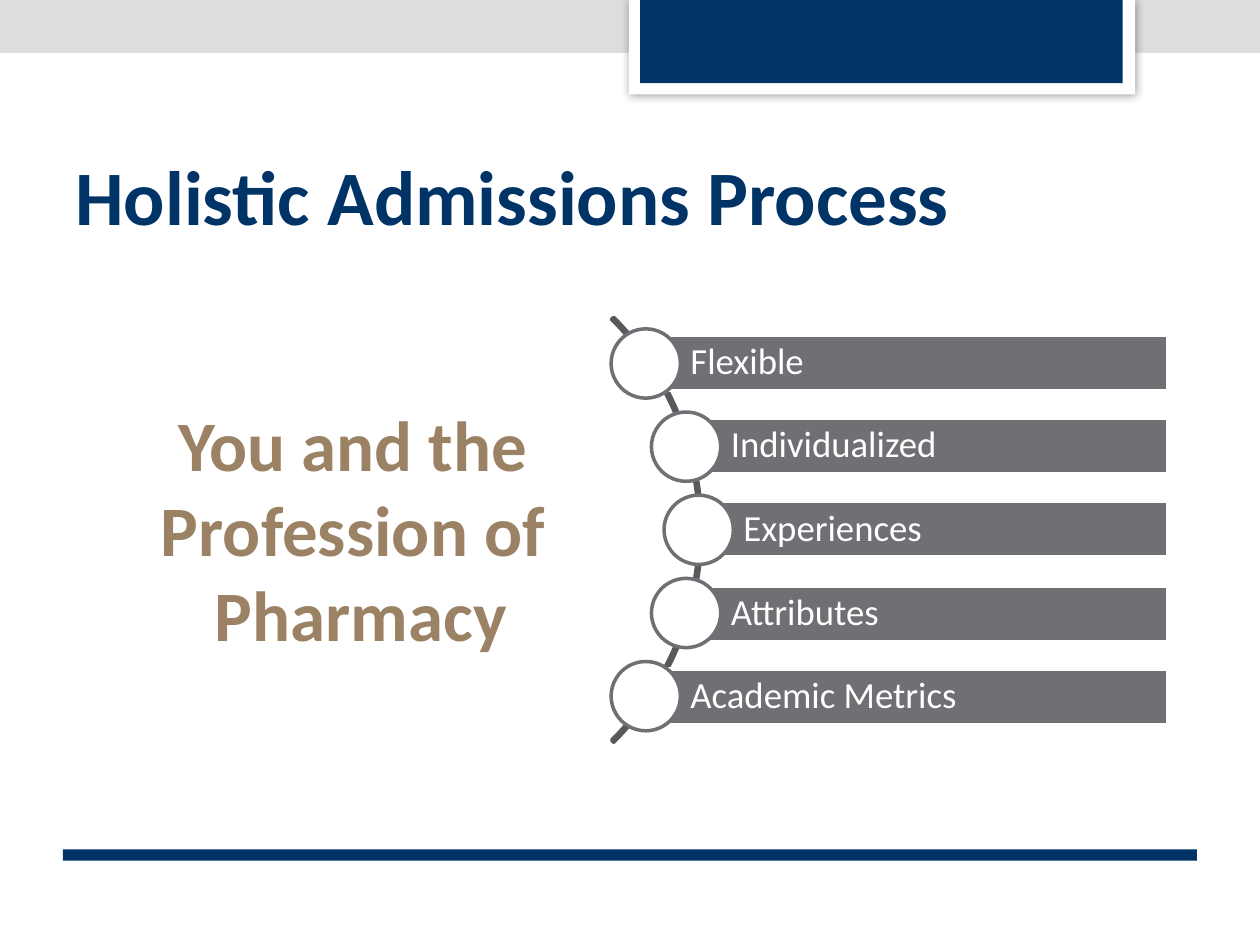
from lxml import etree
from pptx import Presentation
from pptx.dml.color import RGBColor
from pptx.enum.shapes import MSO_SHAPE
from pptx.enum.text import MSO_ANCHOR, MSO_AUTO_SIZE, PP_ALIGN
from pptx.oxml.ns import qn
from pptx.util import Pt

PX = 9144  # 100 px to the inch
RECTANGLE, OVAL, ARC = MSO_SHAPE.RECTANGLE, MSO_SHAPE.OVAL, MSO_SHAPE.BLOCK_ARC
MIDDLE = MSO_ANCHOR.MIDDLE
LEFT, CENTER = PP_ALIGN.LEFT, PP_ALIGN.CENTER
FIT_SHAPE = MSO_AUTO_SIZE.SHAPE_TO_FIT_TEXT

NAVY, GRAY, DARK_GRAY = "003366", "6F6F74", "59595D"
WHITE, TAN, BACKDROP = "FFFFFF", "9C8265", "DDDDDD"

TITLE_FORMAT = {"size": Pt(44), "bold": True}
THEME_FORMAT = {"size": Pt(40.5), "bold": True}
LABEL_FORMAT = {"size": Pt(21), "bold": False}


def set_color(target, color):
    target.rgb = RGBColor.from_string(color)


def add_block(slide, kind, box, fill=None, line=None):
    shape = slide.shapes.add_shape(kind, *(value * PX for value in box))
    shape.shadow.inherit = False
    if fill:
        shape.fill.solid()
        set_color(shape.fill.fore_color, fill)
    else:
        shape.fill.background()
    if line:
        set_color(shape.line.color, line)
        shape.line.width = Pt(2)
    else:
        shape.line.fill.background()
    return shape


def add_glow_shadow(shape):
    """Give the shape a soft black shadow that spreads evenly on all sides."""
    effects = shape._element.spPr.find(qn("a:effectLst"))
    shadow = etree.SubElement(effects, qn("a:outerShdw"), blurRad=str(Pt(5)), dist="0")
    color = etree.SubElement(shadow, qn("a:srgbClr"), val="000000")
    etree.SubElement(color, qn("a:alpha"), val="40000")


def set_text(frame, lines, color, font_format, alignment, spacing=1.0):
    for index, line in enumerate(lines):
        paragraph = frame.paragraphs[0] if index == 0 else frame.add_paragraph()
        paragraph.alignment = alignment
        paragraph.line_spacing = spacing
        run = paragraph.add_run()
        run.text = line
        run.font.name = "Calibri"
        set_color(run.font.color, color)
        for name, value in font_format.items():
            setattr(run.font, name, value)


def set_frame(frame, **settings):
    for name, value in settings.items():
        setattr(frame, name, value)


def add_text_box(slide, box):
    return slide.shapes.add_textbox(*(value * PX for value in box)).text_frame


def draw_backdrop(slide, width, height):
    background = slide.background.fill
    background.solid()
    set_color(background.fore_color, BACKDROP)
    add_block(slide, RECTANGLE, (0, 42, width, height - 42), WHITE)
    add_block(slide, RECTANGLE, (50, 674, width - 100, 9), NAVY)


def draw_header_tab(slide, left, top, width, height):
    frame = add_block(slide, RECTANGLE, (left, top, width, height), WHITE)
    add_glow_shadow(frame)
    add_block(slide, RECTANGLE, (left + 9, top, width - 19, height - 9), NAVY)


def draw_title(slide, box, title):
    frame = add_text_box(slide, box)
    set_frame(frame, word_wrap=True, vertical_anchor=MIDDLE)
    set_text(frame, [title], NAVY, TITLE_FORMAT, LEFT)


def draw_theme(slide, box, lines):
    frame = add_text_box(slide, box)
    set_frame(frame, word_wrap=False, auto_size=FIT_SHAPE,
              margin_left=7 * PX, margin_right=7 * PX,
              margin_top=4 * PX, margin_bottom=4 * PX)
    set_text(frame, lines, TAN, THEME_FORMAT, CENTER)


def draw_curved_list(slide, left, top, width, height, items):
    """Labelled bars, each led by a circle, along an arc that bulges to the right."""
    arc_size, bar_height, circle_size = 477, 44, 55
    pitch = height / len(items)
    arc_top = round(top + (height - arc_size) / 2)
    arc = add_block(slide, ARC, (left - 405, arc_top, arc_size, arc_size),
                    line=DARK_GRAY)
    for index, value in enumerate((189, 27, 0.005)):  # from 315 to 45 degrees
        arc.adjustments[index] = value

    for index, (label, indent) in enumerate(items):
        center_x = left + circle_size // 2 + 1 + indent
        center_y = top + pitch * (index + 0.5)
        bar_top = round(center_y - bar_height / 2)
        bar = add_block(slide, RECTANGLE,
                        (center_x, bar_top, left + width - center_x, bar_height),
                        GRAY, WHITE)
        set_frame(bar.text_frame, word_wrap=True, vertical_anchor=MIDDLE,
                  margin_left=35 * PX, margin_right=6 * PX,
                  margin_top=6 * PX, margin_bottom=6 * PX)
        set_text(bar.text_frame, [label], WHITE, LABEL_FORMAT, LEFT, spacing=0.9)
        circle_top = round(center_y - circle_size / 2)
        add_block(slide, OVAL, (left + indent, circle_top, circle_size, circle_size),
                  WHITE, GRAY)


def main():
    width, height = 1000, 750
    presentation = Presentation()
    presentation.slide_width = width * PX
    presentation.slide_height = height * PX
    slide = presentation.slides.add_slide(presentation.slide_layouts[6])

    draw_backdrop(slide, width, height)
    draw_header_tab(slide, 499, 0, 402, 75)
    draw_title(slide, (50, 100, 900, 109), "Holistic Admissions Process")
    draw_curved_list(slide, 485, 255, 442, 331, [
        ("Flexible", 0),
        ("Individualized", 32),
        ("Experiences", 42),
        ("Attributes", 32),
        ("Academic Metrics", 0),
    ])
    draw_theme(slide, (119, 314, 335, 212),
               ["You and the ", "Profession of ", "Pharmacy"])
    presentation.save("out.pptx")


if __name__ == "__main__":
    main()
